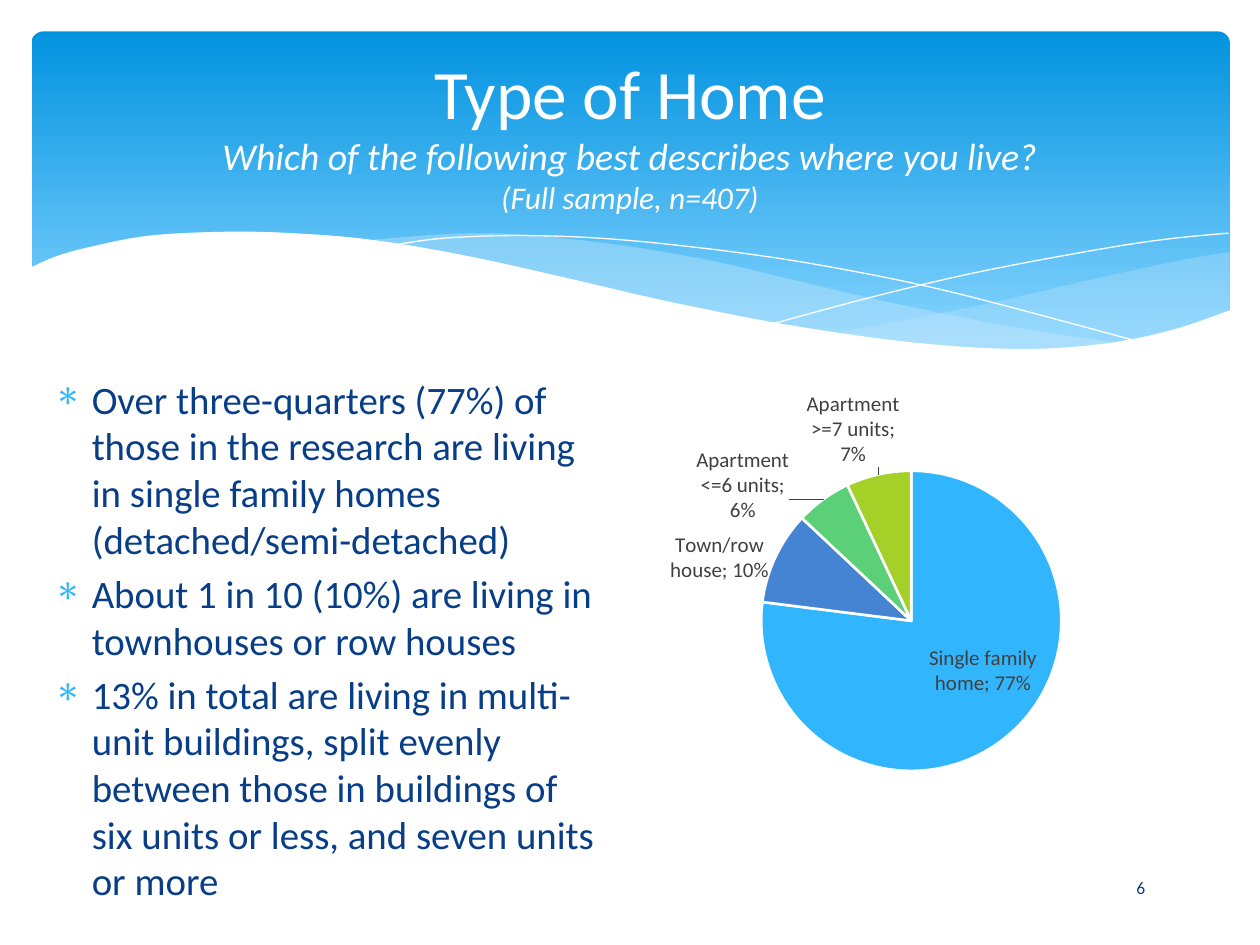
import pptx
import pptx.chart.data
import pptx.dml.color
import pptx.enum.chart
import pptx.enum.shapes
import pptx.enum.text
import pptx.oxml
import pptx.util
from pptx.util import Inches

COLORS = {
    "white": "FFFFFF", "banner_top": "0293E0", "banner_bottom": "83D3FE",
    "wave": "C6E7FC", "text": "073E87", "bullet": "31B6FD", "label": "404040",
    "single": "31B6FD", "town": "4584D3", "small": "5BD078", "large": "A5D028",
}
FONT = "Calibri"
DRAWING = "http://schemas.openxmlformats.org/drawingml/2006/main"
CHART = "http://schemas.openxmlformats.org/drawingml/2006/chart"


def color(name):
    return pptx.dml.color.RGBColor.from_string(COLORS[name])


def smooth(points, steps=8):
    """Pass a Catmull-Rom curve through the points, in inches."""
    padded = [points[0], *points, points[-1]]
    curve = [points[0]]
    for a, b, c, d in zip(padded, padded[1:], padded[2:], padded[3:]):
        for step in range(1, steps + 1):
            t = step / steps
            curve.append(tuple(
                q + t / 2 * (r - p + t * (2*p - 5*q + 4*r - s + t * (3*(q - r) + s - p)))
                for p, q, r, s in zip(a, b, c, d)))
    return curve


presentation = pptx.Presentation()
presentation.slide_width = Inches(10)
presentation.slide_height = Inches(7.5)
slide = presentation.slides.add_slide(presentation.slide_layouts[5])
shapes = slide.shapes

# Banner
banner = shapes.add_shape(pptx.enum.shapes.MSO_SHAPE.ROUNDED_RECTANGLE,
                          Inches(0.25), Inches(0.25), Inches(9.51), Inches(2.7))
banner.adjustments[0] = 0.034
banner.shadow.inherit = False
banner.line.fill.background()
banner.fill.gradient()
banner.fill.gradient_angle = 270
for stop, position, name in zip(banner.fill.gradient_stops, (0, 0.9),
                                ("banner_top", "banner_bottom")):
    stop.position = position
    stop.color.rgb = color(name)

# Waves: outline, fill opacity in percent (None for a thin white line)
right_wave = (
    smooth([(9.76, 2), (9.35, 2.07), (8.61, 2.23), (7.79, 2.42), (6.61, 2.65)])
    + smooth([(6.61, 2.65), (7.32, 2.74), (8.03, 2.78), (8.72, 2.74),
              (9.28, 2.63), (9.76, 2.47)]))
middle_wave = (
    smooth([(8.93, 2.73), (8.07, 2.6), (7.06, 2.4), (6.29, 2.22), (5.55, 2.05),
            (4.65, 1.91), (3.8, 1.85), (2.86, 1.91)])
    + smooth([(2.86, 1.91), (3.62, 2.03), (4.49, 2.22), (5.3, 2.4), (6.18, 2.58),
              (7.09, 2.72), (8.07, 2.78), (8.93, 2.73)]))
falling_line = smooth([(3.09, 1.95), (3.53, 1.89), (4.16, 1.87), (4.89, 1.9),
                       (5.82, 2), (6.65, 2.13), (7.6, 2.33), (9.07, 2.72)])
rising_line = smooth([(6.13, 2.57), (6.95, 2.35), (7.76, 2.16), (8.66, 1.99),
                      (9.24, 1.9), (9.75, 1.85)])
white_wave = smooth([
    (9.77, 2.46), (9.3, 2.62), (8.75, 2.73), (8.09, 2.77), (7.26, 2.72),
    (6.26, 2.58), (5.29, 2.39), (4.47, 2.2), (3.65, 2.02), (2.92, 1.9),
    (2.3, 1.85), (1.77, 1.84), (1.19, 1.87), (0.76, 1.95), (0.46, 2.03),
    (0.23, 2.13)]) + [(0.23, 3.29), (9.77, 3.29)]

for outline, name, opacity in (
        (right_wave, "wave", 29), (middle_wave, "wave", 40),
        (falling_line, "white", None), (rising_line, "white", None),
        (white_wave, "white", 100)):
    points = [(Inches(x), Inches(y)) for x, y in outline]
    builder = shapes.build_freeform(*points[0])
    builder.add_line_segments(points[1:], close=opacity is not None)
    wave = builder.convert_to_shape()
    wave.shadow.inherit = False
    if opacity is None:
        wave.fill.background()
        wave.line.color.rgb = color(name)
        wave.line.width = pptx.util.Pt(0)
        continue
    wave.line.fill.background()
    wave.fill.solid()
    wave.fill.fore_color.rgb = color(name)
    if opacity < 100:
        solid = wave.element.spPr.find(f"{{{DRAWING}}}solidFill")
        solid[0].append(pptx.oxml.parse_xml(
            f'<a:alpha xmlns:a="{DRAWING}" val="{opacity * 1000}"/>'))

# Title, brought in front of the banner
title = shapes.title
title.element.getparent().append(title.element)
title.left, title.top, title.width, title.height = (
    Inches(0.5), Inches(0.37), Inches(9), Inches(1.37))
title.text_frame.vertical_anchor = pptx.enum.text.MSO_ANCHOR.MIDDLE
paragraph = title.text_frame.paragraphs[0]
paragraph.alignment = pptx.enum.text.PP_ALIGN.CENTER
paragraph.font.name = FONT
paragraph.font.color.rgb = color("white")
for index, (text, size, italic) in enumerate((
        ("Type of Home", 39.6, False),
        ("Which of the following best describes where you live?", 21.6, True),
        ("(Full sample, n=407)", 18, True))):
    if index:
        paragraph.add_line_break()
    run = paragraph.add_run()
    run.text = text
    run.font.size = pptx.util.Pt(size)
    run.font.italic = italic

# Slide number
number = shapes.add_textbox(Inches(8.42), Inches(6.84), Inches(1.27), Inches(0.4))
number.text_frame.word_wrap = True
number.text_frame.vertical_anchor = pptx.enum.text.MSO_ANCHOR.MIDDLE
paragraph = number.text_frame.paragraphs[0]
paragraph.text = "6"
paragraph.alignment = pptx.enum.text.PP_ALIGN.CENTER
paragraph.font.name = FONT
paragraph.font.size = pptx.util.Pt(10)
paragraph.font.color.rgb = color("text")

# Findings
findings = shapes.add_textbox(Inches(0.33), Inches(2.93), Inches(4.59), Inches(3.77))
findings.text_frame.word_wrap = True
for index, text in enumerate((
        "Over three-quarters (77%) of those in the research are living in single "
        "family homes (detached/semi-detached)",
        "About 1 in 10 (10%) are living in townhouses or row houses",
        "13% in total are living in multi-unit buildings, split evenly between those "
        "in buildings of six units or less, and seven units or more")):
    frame = findings.text_frame
    paragraph = frame.add_paragraph() if index else frame.paragraphs[0]
    paragraph.text = text
    if index:
        paragraph.space_before = pptx.util.Pt(4.4)
    properties = paragraph._p.get_or_add_pPr()
    properties.set("marL", str(Inches(0.3)))
    properties.set("indent", str(-Inches(0.3)))
    for bullet in (f'<a:buClr xmlns:a="{DRAWING}"><a:srgbClr val="{COLORS["bullet"]}"/></a:buClr>',
                   f'<a:buChar xmlns:a="{DRAWING}" char="∗"/>'):
        properties.append(pptx.oxml.parse_xml(bullet))
    paragraph.font.name = FONT
    paragraph.font.size = pptx.util.Pt(22.2)
    paragraph.font.color.rgb = color("text")

# Home type pie
data = pptx.chart.data.CategoryChartData(number_format="0%")
data.categories = ["Single family home", "Town/row house",
                   "Apartment <=6 units", "Apartment >=7 units"]
data.add_series("Series 1", (0.77, 0.1, 0.06, 0.07))
chart = shapes.add_chart(pptx.enum.chart.XL_CHART_TYPE.PIE, Inches(5.08), Inches(2.93),
                         Inches(4.18), Inches(3.77), data).chart
chart.has_legend = False
chart.has_title = False
chart.font.name = FONT
chart.font.size = pptx.util.Pt(10)
plot = chart.plots[0]
plot.vary_by_categories = True
for index, name in enumerate(("single", "town", "small", "large")):
    point = plot.series[0].points[index]
    point.format.fill.solid()
    point.format.fill.fore_color.rgb = color(name)
    point.format.line.color.rgb = color("white")
    point.format.line.width = pptx.util.Pt(1.5)
labels = plot.series[0].data_labels
labels.show_category_name = True
labels.show_value = True
labels.number_format = "0%"
labels.number_format_is_linked = False
labels.position = pptx.enum.chart.XL_LABEL_POSITION.BEST_FIT
labels.font.name = FONT
labels.font.size = pptx.util.Pt(12)
labels.font.color.rgb = color("label")
area = chart._chartSpace.chart.plotArea
for old in area.findall(f"{{{CHART}}}layout"):
    area.remove(old)
area.insert(0, pptx.oxml.parse_xml(
    f'<c:layout xmlns:c="{CHART}"><c:manualLayout><c:layoutTarget val="inner"/>'
    '<c:xMode val="edge"/><c:yMode val="edge"/><c:x val="0.23"/><c:y val="0.21"/>'
    '<c:w val="0.57"/><c:h val="0.64"/></c:manualLayout></c:layout>'))

presentation.save("out.pptx")
